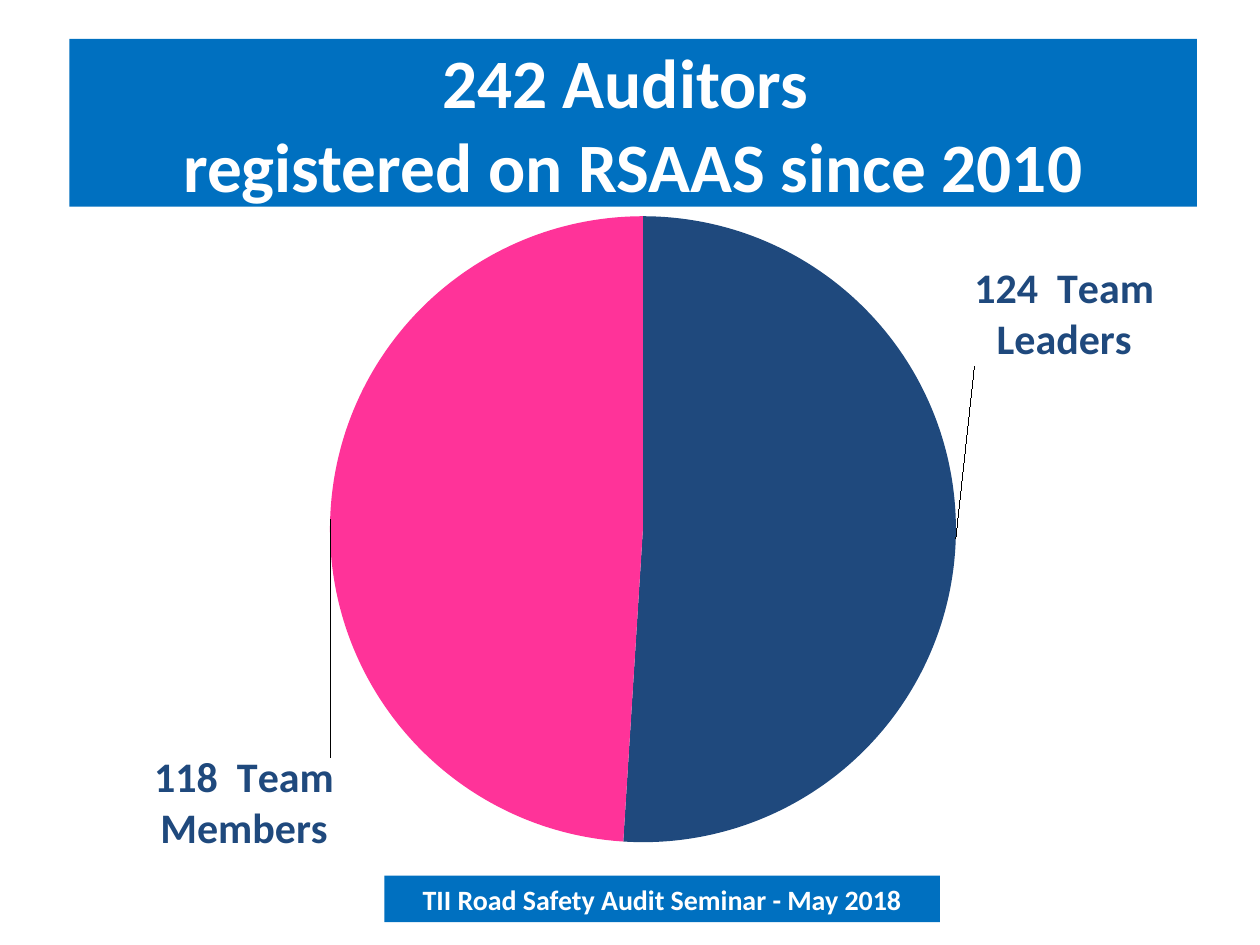
from lxml import etree
from pptx import Presentation
from pptx.chart.data import CategoryChartData
from pptx.dml.color import RGBColor
from pptx.enum.chart import XL_CHART_TYPE as ChartType, XL_LABEL_POSITION as LabelPosition
from pptx.enum.shapes import MSO_SHAPE as Shape
from pptx.enum.text import MSO_ANCHOR as Anchor, PP_ALIGN as Align
from pptx.oxml import parse_xml
from pptx.oxml.ns import nsdecls, qn
from pptx.util import Inches, Pt

FONT = "Calibri"
COLORS = {"banner": "0070C0", "white": "FFFFFF", "leaders": "1F497D", "members": "FF3399"}


def add_banner(page, left, top, width, height, lines, size):
    box = page.shapes.add_shape(Shape.RECTANGLE, Inches(left), Inches(top),
                                Inches(width), Inches(height))
    box.shadow.inherit = False
    box.fill.solid()
    box.fill.fore_color.rgb = RGBColor.from_string(COLORS["banner"])
    box.line.fill.background()
    frame = box.text_frame
    frame.word_wrap = True
    frame.vertical_anchor = Anchor.MIDDLE
    frame.margin_top = frame.margin_bottom = 0
    para = frame.paragraphs[0]
    para.alignment = Align.CENTER
    for index, line in enumerate(lines):
        if index:
            para.add_line_break()
        span = para.add_run()
        span.text = line
        span.font.name = FONT
        span.font.size = Pt(size)
        span.font.bold = True
        span.font.color.rgb = RGBColor.from_string(COLORS["white"])


def manual_layout(x, y, width=None, height=None):
    inner = width is not None
    parts = [("layoutTarget", "inner"), ("xMode", "edge"), ("yMode", "edge")] if inner else []
    parts += [("x", x), ("y", y)]
    if inner:
        parts += [("w", width), ("h", height)]
    layout = parse_xml(f"<c:layout {nsdecls('c')}><c:manualLayout/></c:layout>")
    for tag, value in parts:
        etree.SubElement(layout[0], qn(f"c:{tag}")).set("val", str(value))
    return layout


deck = Presentation()
deck.slide_width = Inches(10)
deck.slide_height = Inches(7.5)
page = deck.slides.add_slide(deck.slide_layouts[6])

# Footer and title banners
add_banner(page, 3.05, 6.95, 4.41, 0.37, ["TII Road Safety Audit Seminar - May 2018"], 16)
add_banner(page, 0.55, 0.31, 8.95, 1.33,
           ["242 Auditors ", "registered on RSAAS since 2010"], 39.6)

# Pie chart
data = CategoryChartData()
data.categories = ["124  Team Leaders", "118  Team Members"]
data.add_series("Series 1", (51, 49))
chart = page.shapes.add_chart(ChartType.PIE, Inches(0.47), Inches(1.56),
                              Inches(8.91), Inches(5.23), data).chart
chart.has_legend = False
chart.has_title = False
chart.font.name = FONT
chart.font.size = Pt(10)
plot_area = chart.plots[0]._element.getparent()
for old_layout in plot_area.findall(qn("c:layout")):
    plot_area.remove(old_layout)
plot_area.insert(0, manual_layout(0.24, 0.03, 0.56, 0.95))

# Category labels, moved away from the slices
series = chart.plots[0].series[0]
labels = series.data_labels
labels.show_value = False
labels.show_category_name = True
labels.position = LabelPosition.OUTSIDE_END
offsets = [(0.01, -0.34), (0.01, 0.44)]
for index, (name, offset) in enumerate(zip(("leaders", "members"), offsets)):
    point = series.points[index]
    point.format.fill.solid()
    point.format.fill.fore_color.rgb = RGBColor.from_string(COLORS[name])
    label = point.data_label
    label.font.name = FONT
    label.font.size = Pt(24)
    label.font.bold = True
    label.font.color.rgb = RGBColor.from_string(COLORS["leaders"])
    label.position = LabelPosition.OUTSIDE_END
    element = series._element.findall(".//" + qn("c:dLbl"))[index]
    element.find(qn("c:idx")).addnext(manual_layout(*offset))
    element.find(qn("c:showVal")).set("val", "0")
    element.find(qn("c:showCatName")).set("val", "1")

deck.save("out.pptx")
